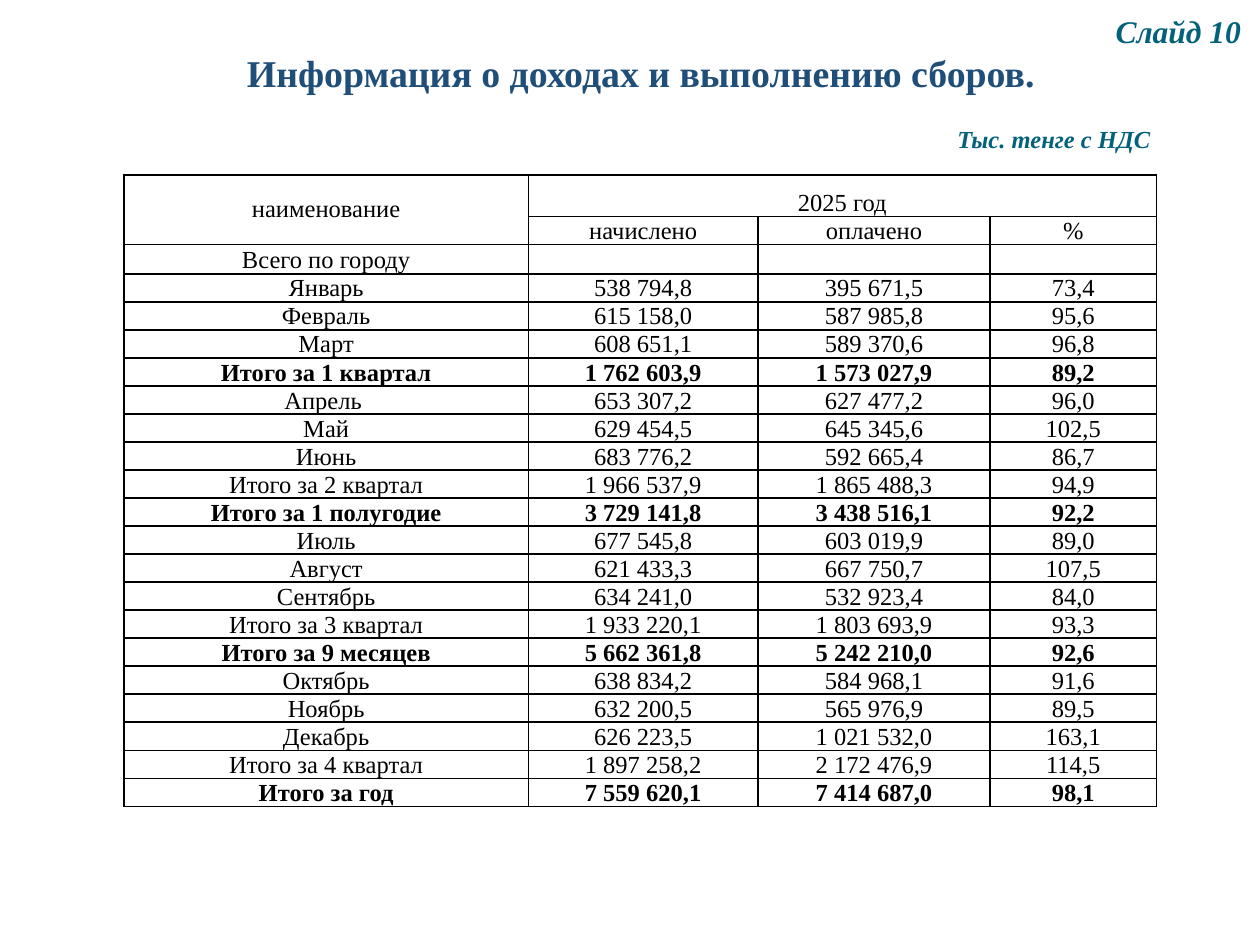
from dataclasses import dataclass

from lxml.etree import SubElement
from pptx import Presentation
from pptx.dml.color import RGBColor
from pptx.enum.text import MSO_ANCHOR, MSO_AUTO_SIZE, PP_ALIGN
from pptx.oxml import parse_xml
from pptx.oxml.ns import nsdecls, qn
from pptx.util import Cm, Pt


@dataclass(frozen=True)
class Theme:
    font: str = "Times New Roman"
    title_color: str = "1F4E79"
    accent_color: str = "04617B"
    table_color: str = "000000"
    title_size: float = 21.6
    label_size: float = 18
    body_size: float = 14
    border_width: float = 1
    line_spacing: float = 0.9


THEME = Theme()

HEADER = ["начислено", "оплачено", "%"]
INCOME = [
    ("Всего по городу", "", "", ""),
    ("Январь", "538 794,8", "395 671,5", "73,4"),
    ("Февраль", "615 158,0", "587 985,8", "95,6"),
    ("Март", "608 651,1", "589 370,6", "96,8"),
    ("Итого за 1 квартал", "1 762 603,9", "1 573 027,9", "89,2"),
    ("Апрель ", "653 307,2", "627 477,2", "96,0"),
    ("Май", "629 454,5", "645 345,6", "102,5"),
    ("Июнь", "683 776,2", "592 665,4", "86,7"),
    ("Итого за 2 квартал", "1 966 537,9", "1 865 488,3", "94,9"),
    ("Итого за 1 полугодие", "3 729 141,8", "3 438 516,1", "92,2"),
    ("Июль", "677 545,8", "603 019,9", "89,0"),
    ("Август", "621 433,3", "667 750,7", "107,5"),
    ("Сентябрь", "634 241,0", "532 923,4", "84,0"),
    ("Итого за 3 квартал", "1 933 220,1", "1 803 693,9", "93,3"),
    ("Итого за 9 месяцев", "5 662 361,8", "5 242 210,0", "92,6"),
    ("Октябрь", "638 834,2", "584 968,1", "91,6"),
    ("Ноябрь", "632 200,5", "565 976,9", "89,5"),
    ("Декабрь", "626 223,5", "1 021 532,0", "163,1"),
    ("Итого за 4 квартал", "1 897 258,2", "2 172 476,9", "114,5"),
    ("Итого за год", "7 559 620,1", "7 414 687,0", "98,1"),
]
BOLD_ROWS = {"Итого за 1 квартал", "Итого за 1 полугодие",
             "Итого за 9 месяцев", "Итого за год"}
COLUMN_WIDTHS = [8.15, 4.63, 4.68, 3.35]
TABLE_HEIGHT, TOP_ROW_HEIGHT = 12.71, 0.83


def write_text(frame, text, size=THEME.body_size, color=THEME.table_color,
               bold=False, italic=False, align=PP_ALIGN.CENTER):
    para = frame.paragraphs[0]
    para.alignment = align
    para.line_spacing = THEME.line_spacing
    if not text:
        # An empty paragraph keeps the row low through its end mark
        SubElement(para._p, qn("a:endParaRPr"), sz=str(int(size * 100)))
        return
    span = para.add_run()
    span.text = text
    font = span.font
    font.name, font.size = THEME.font, Pt(size)
    font.bold, font.italic = bold, italic
    font.color.rgb = RGBColor.from_string(color)


def add_title(page, text):
    title = page.shapes.title
    title.left, title.top = Cm(1.9), Cm(1.12)
    title.width, title.height = Cm(22.23), Cm(0.79)
    frame = title.text_frame
    frame.auto_size = MSO_AUTO_SIZE.NONE
    frame.vertical_anchor = MSO_ANCHOR.MIDDLE
    write_text(frame, text, size=THEME.title_size, color=THEME.title_color,
               bold=True)


def add_label(page, text, left, top, width, height, size):
    box = page.shapes.add_textbox(Cm(left), Cm(top), Cm(width), Cm(height))
    frame = box.text_frame
    frame.word_wrap = True
    frame.vertical_anchor = MSO_ANCHOR.MIDDLE
    frame.margin_left = frame.margin_right = Cm(0.18)
    frame.margin_top = frame.margin_bottom = Cm(0.1)
    write_text(frame, text, size=size, color=THEME.accent_color, bold=True,
               italic=True, align=PP_ALIGN.JUSTIFY)


def format_cell(cell):
    cell.margin_left = cell.margin_right = Cm(0.02)
    cell.margin_top = cell.margin_bottom = 0
    cell.vertical_anchor = MSO_ANCHOR.BOTTOM
    cell.fill.background()
    # Borders go before the fill in the cell properties
    properties = cell._tc.get_or_add_tcPr()
    for index, side in enumerate(("lnL", "lnR", "lnT", "lnB")):
        properties.insert(index, parse_xml(
            f'<a:{side} {nsdecls("a")} w="{Pt(THEME.border_width)}"><a:solidFill>'
            f'<a:srgbClr val="{THEME.table_color}"/></a:solidFill></a:{side}>'))


def add_income_table(page):
    rows = [("наименование", "2025 год", "", ""), ("", *HEADER), *INCOME]
    row_height = (TABLE_HEIGHT - TOP_ROW_HEIGHT) / (len(rows) - 1)
    table = page.shapes.add_table(
        len(rows), len(COLUMN_WIDTHS), Cm(2.5), Cm(3.53),
        Cm(sum(COLUMN_WIDTHS)), Cm(TABLE_HEIGHT)).table
    table.first_row = table.horz_banding = False
    for column, width in zip(table.columns, COLUMN_WIDTHS):
        column.width = Cm(width)
    for index, values in enumerate(rows):
        table.rows[index].height = Cm(row_height if index else TOP_ROW_HEIGHT)
        for position, value in enumerate(values):
            cell = table.cell(index, position)
            format_cell(cell)
            write_text(cell.text_frame, value, bold=values[0] in BOLD_ROWS)

    # Two-level header
    name_cell = table.cell(0, 0)
    name_cell.merge(table.cell(1, 0))
    name_cell.vertical_anchor = MSO_ANCHOR.MIDDLE
    table.cell(0, 1).merge(table.cell(0, 3))


def main():
    deck = Presentation()
    deck.slide_width, deck.slide_height = Cm(25.4), Cm(19.05)
    page = deck.slides.add_slide(deck.slide_layouts[5])

    # Heading and unit of measure
    add_title(page, "Информация о доходах и выполнению сборов. ")
    add_label(page, "Тыс. тенге с НДС", 19.12, 1.75, 5.44, 2.18, THEME.body_size)

    # Monthly figures
    add_income_table(page)

    # Slide number
    add_label(page, "Слайд 10", 22.31, 0.36, 4.39, 0.61, THEME.label_size)
    deck.save("out.pptx")


if __name__ == "__main__":
    main()
